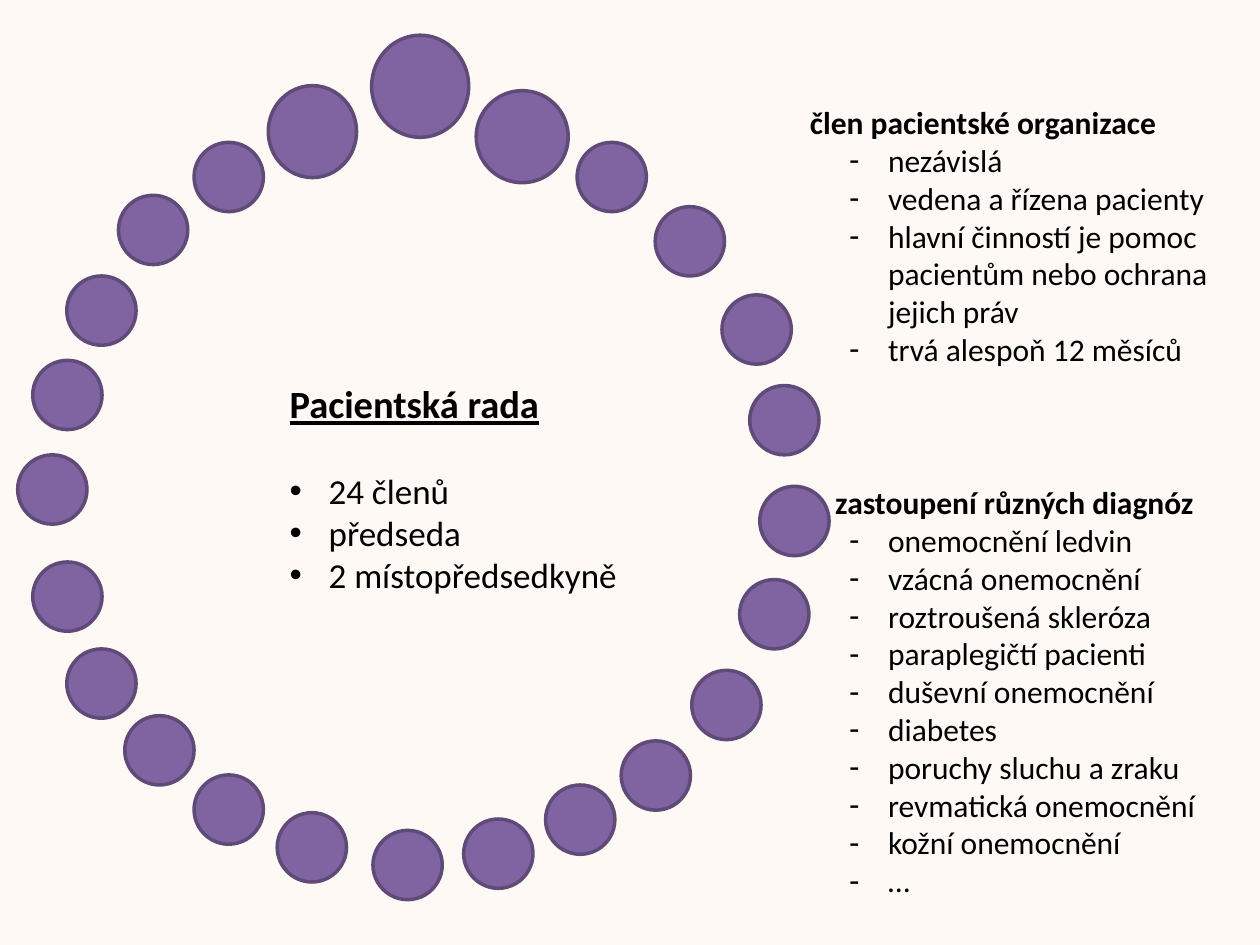
from dataclasses import dataclass

from lxml import etree
from pptx import Presentation
from pptx.dml.color import RGBColor
from pptx.enum.shapes import MSO_SHAPE
from pptx.enum.text import MSO_ANCHOR, MSO_AUTO_SIZE, PP_ALIGN
from pptx.oxml.ns import qn
from pptx.util import Inches, Pt

OVAL = MSO_SHAPE.OVAL
TOP = MSO_ANCHOR.TOP
GROW = MSO_AUTO_SIZE.SHAPE_TO_FIT_TEXT
LEFT = PP_ALIGN.LEFT


@dataclass(frozen=True)
class Theme:
    font: str = "Calibri"
    background: RGBColor = RGBColor(0xFE, 0xF9, 0xF5)
    text: RGBColor = RGBColor(0, 0, 0)
    circle: RGBColor = RGBColor(0x80, 0x64, 0xA2)
    outline: RGBColor = RGBColor(0x5F, 0x4A, 0x78)
    outline_width: float = 2
    heading_size: float = 22
    list_size: float = 20
    detail_size: float = 18


@dataclass(frozen=True)
class Line:
    text: str
    size: float
    margin: float = 0
    indent: float = 0
    level: int = 0
    bullet: str = ""
    bold: bool = False
    underline: bool = False
    before: float = 0


class SlideBuilder:
    def __init__(self, slide, theme):
        self.slide = slide
        self.theme = theme

    def background(self):
        fill = self.slide.background.fill
        fill.solid()
        fill.fore_color.rgb = self.theme.background

    def circle(self, left, top, width, height):
        sp = self.slide.shapes.add_shape(
            OVAL, Inches(left), Inches(top), Inches(width), Inches(height)
        )
        sp.shadow.inherit = False
        sp.fill.solid()
        sp.fill.fore_color.rgb = self.theme.circle
        sp.line.color.rgb = self.theme.outline
        sp.line.width = Pt(self.theme.outline_width)

    def text_box(self, left, top, width, height, lines):
        sp = self.slide.shapes.add_textbox(
            Inches(left), Inches(top), Inches(width), Inches(height)
        )
        tf = sp.text_frame
        tf.word_wrap = True
        tf.auto_size = GROW
        tf.vertical_anchor = TOP
        tf.text = "\n".join(line.text for line in lines)
        for p, line in zip(tf.paragraphs, lines):
            self.format_line(p, line)

    def format_line(self, p, line):
        p.alignment = LEFT
        p.level = line.level
        p.space_before = Pt(line.before)
        pPr = p._p.get_or_add_pPr()
        pPr.set("marL", str(Inches(line.margin)))
        pPr.set("indent", str(Inches(line.indent)))
        if line.bullet:
            etree.SubElement(pPr, qn("a:buFont"), typeface="Arial")
            etree.SubElement(pPr, qn("a:buChar"), char=line.bullet)
        else:
            etree.SubElement(pPr, qn("a:buNone"))
        for r in p.runs:
            r.font.name = self.theme.font
            r.font.size = Pt(line.size)
            r.font.color.rgb = self.theme.text
            r.font.bold = line.bold
            r.font.underline = line.underline


THEME = Theme()
MEMBER_SIZE = 0.55
LEADERS = [(2.13, 0.68, 0.7, 0.73), (2.95, 0.28, 0.77, 0.81), (3.78, 0.72, 0.73, 0.73)]
MEMBERS = [
    (4.58, 1.13), (5.2, 1.64), (5.73, 2.34), (5.95, 3.06), (6.03, 3.86),
    (5.87, 4.6), (5.49, 5.32), (4.93, 5.88), (4.33, 6.23), (3.68, 6.5),
    (2.96, 6.59), (2.2, 6.45), (1.54, 6.15), (0.99, 5.68), (0.53, 5.15),
    (0.26, 4.46), (0.14, 3.61), (0.26, 2.86), (0.53, 2.19), (0.94, 1.55),
    (1.54, 1.13),
]
COUNCIL = ["24 členů", "předseda", "2 místopředsedkyně"]
ORGANISATION = [
    "nezávislá",
    "vedena a řízena pacienty",
    "hlavní činností je pomoc pacientům nebo ochrana jejich práv",
    "trvá alespoň 12 měsíců",
]
DIAGNOSES = [
    "onemocnění ledvin",
    "vzácná onemocnění",
    "roztroušená skleróza",
    "paraplegičtí pacienti",
    "duševní onemocnění",
    "diabetes",
    "poruchy sluchu a zraku",
    "revmatická onemocnění",
    "kožní onemocnění",
    "…",
]


def council_lines():
    heading = Line("Pacientská rada", THEME.heading_size, bold=True, underline=True)
    items = [
        Line(text, THEME.list_size, 0.31, -0.31, bullet="•", before=0 if i else 24.4)
        for i, text in enumerate(COUNCIL)
    ]
    return [heading, *items]


def dashed(texts):
    return [Line(text, THEME.detail_size, 0.81, -0.31, 1, "-") for text in texts]


def detail_lines():
    size = THEME.detail_size
    return [
        Line("člen pacientské organizace", size, indent=0.19, bold=True),
        *dashed(ORGANISATION),
        Line("zastoupení různých diagnóz", size, 0.5, -0.11, 1, bold=True, before=66),
        *dashed(DIAGNOSES),
    ]


def main():
    prs = Presentation()
    prs.slide_width = Inches(10)
    prs.slide_height = Inches(7.5)
    s = SlideBuilder(prs.slides.add_slide(prs.slide_layouts[6]), THEME)
    s.background()
    for leader in LEADERS:
        s.circle(*leader)
    for left, top in MEMBERS:
        s.circle(left, top, MEMBER_SIZE, MEMBER_SIZE)
    s.text_box(2.2, 2.97, 2.91, 1.82, council_lines())
    s.text_box(6.14, 0.77, 4.04, 6.77, detail_lines())
    prs.save("out.pptx")


if __name__ == "__main__":
    main()
